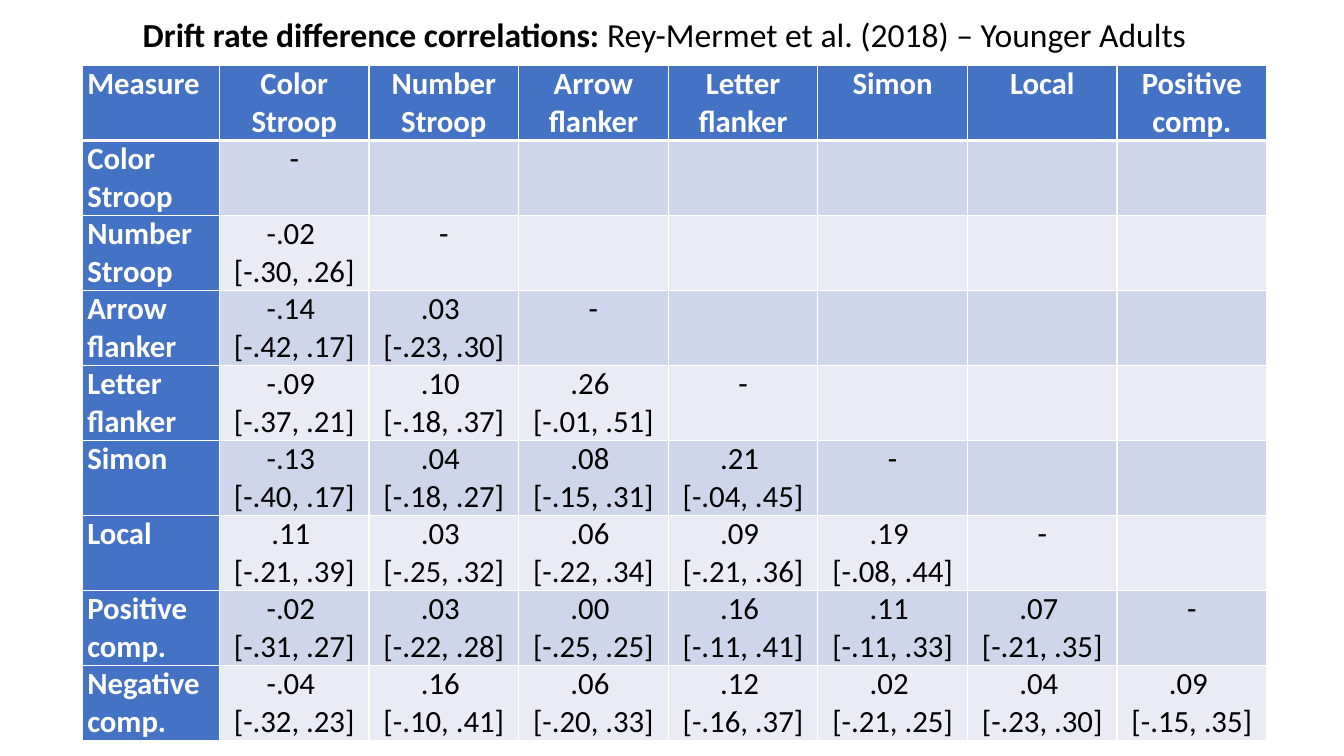
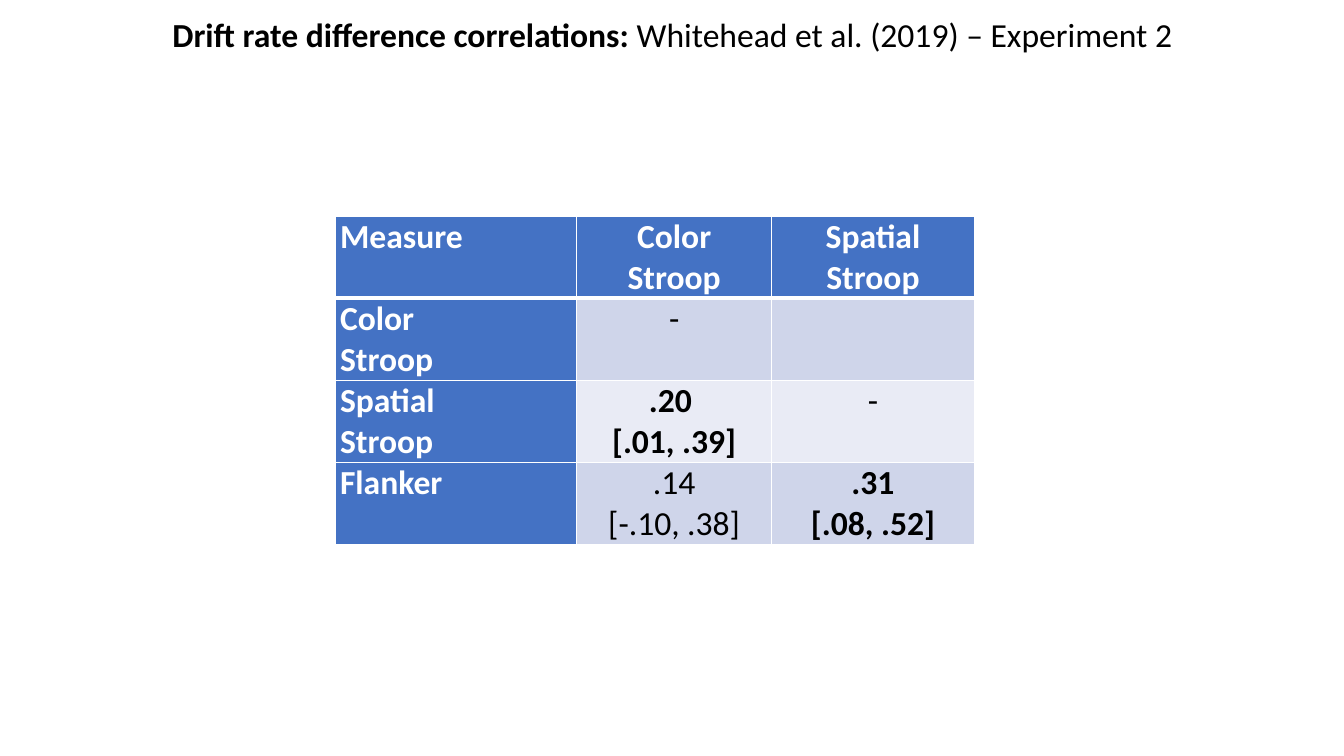
import pptx
import pptx.util
import pptx.dml.color
import pptx.enum.text
import pptx.oxml
import pptx.oxml.ns

Cm = pptx.util.Cm
Pt = pptx.util.Pt
RGBColor = pptx.dml.color.RGBColor
ALIGN = pptx.enum.text.PP_ALIGN

FONT = "Calibri"
BLUE = RGBColor(0x44, 0x72, 0xC4)
BANDS = RGBColor(0xCF, 0xD5, 0xEA), RGBColor(0xE9, 0xEB, 0xF5)
WHITE = RGBColor(0xFF, 0xFF, 0xFF)
BLACK = RGBColor(0, 0, 0)

# Each measure with its correlations and intervals against the ones before it
YOUNG = {
    "Color Stroop": [],
    "Number Stroop": ["-.02 [-.30, .26]"],
    "Arrow flanker": ["-.14 [-.42, .17]", ".03 [-.23, .30]"],
    "Letter flanker": ["-.09 [-.37, .21]", ".10 [-.18, .37]", ".26 [-.01, .51]"],
    "Simon": ["-.13 [-.40, .17]", ".04 [-.18, .27]", ".08 [-.15, .31]",
              ".21 [-.04, .45]"],
    "Local": [".11 [-.21, .39]", ".03 [-.25, .32]", ".06 [-.22, .34]",
              ".09 [-.21, .36]", ".19 [-.08, .44]"],
    "Positive comp.": ["-.02 [-.31, .27]", ".03 [-.22, .28]", ".00 [-.25, .25]",
                       ".16 [-.11, .41]", ".11 [-.11, .33]", ".07 [-.21, .35]"],
    "Negative comp.": ["-.04 [-.32, .23]", ".16 [-.10, .41]", ".06 [-.20, .33]",
                       ".12 [-.16, .37]", ".02 [-.21, .25]", ".04 [-.23, .30]",
                       ".09 [-.15, .35]"],
}
SECOND = {
    "Color Stroop": [],
    "Spatial Stroop": [".20 [.01, .39]"],
    "Flanker": [".14[-.10, .38]", ".31[.08, .52]"],
}


def write(para, text, size=24, bold=False, color=BLACK, align=ALIGN.CENTER):
    """Add one formatted run to a paragraph."""
    para.alignment = align
    run = para.add_run()
    run.text = text
    font = run.font
    font.name, font.size, font.bold = FONT, Pt(size), bold
    font.color.rgb = color


class Deck:
    def __init__(self):
        self.file = pptx.Presentation()
        self.file.slide_width, self.file.slide_height = Cm(33.87), Cm(19.05)
        self.slide = None

    def page(self, source, left=2.9):
        """Start a slide with its centred title."""
        self.slide = self.file.slides.add_slide(self.file.slide_layouts[5])
        title = self.slide.shapes.title
        title.left, title.top = Cm(left), Cm(0.23)
        title.width, title.height = Cm(28.09), Cm(1.28)
        frame = title.text_frame
        frame.auto_size = pptx.enum.text.MSO_AUTO_SIZE.NONE
        para = frame.paragraphs[0]
        write(para, "Drift rate difference correlations: ", bold=True)
        write(para, source)

    def edge(self, cell, row):
        """Draw white borders, thick between header and body."""
        thick = {"T": row == 1, "B": row == 0}
        props = cell._tc.get_or_add_tcPr()
        for spot, side in enumerate("LRTB"):
            width = Pt(3 if thick.get(side) else 1)
            props.insert(spot, pptx.oxml.parse_xml(
                f'<a:ln{side} {pptx.oxml.ns.nsdecls("a")} w="{width}"><a:solidFill>'
                f'<a:srgbClr val="{WHITE}"/></a:solidFill></a:ln{side}>'))

    def cell(self, cell, lines, fill, **style):
        """Fill a cell with one paragraph per line."""
        cell.margin_left = cell.margin_right = Cm(0.12)
        cell.margin_top = cell.margin_bottom = 0
        cell.fill.solid()
        cell.fill.fore_color.rgb = fill
        frame = cell.text_frame
        for spot, line in enumerate(lines):
            para = frame.add_paragraph() if spot else frame.paragraphs[0]
            write(para, line, **style)

    def matrix(self, data, left, top, widths, height, size):
        """Draw a lower triangle of correlations."""
        names = list(data)
        rows = len(names) + 1
        table = self.slide.shapes.add_table(
            rows, len(widths), Cm(left), Cm(top),
            Cm(sum(widths)), Cm(height * rows)).table
        table.first_col = True
        for col, width in zip(table.columns, widths):
            col.width = Cm(width)
        grid = [["Measure"] + names[:-1]]
        grid += [[name, *data[name], "-"] for name in names]
        for y, row in enumerate(table.rows):
            row.height = Cm(height)
            for x, cell in enumerate(row.cells):
                text = grid[y][x] if x < len(grid[y]) else ""
                if x == 0 or y == 0:
                    self.cell(cell, text.split(), BLUE, size=size, bold=True,
                              color=WHITE, align=ALIGN.CENTER if x else ALIGN.LEFT)
                else:
                    # Bold marks an interval that lies above zero
                    value, mark, span = text.partition("[")
                    lines = [part for part in (value, mark + span) if part]
                    self.cell(cell, lines, BANDS[(y - 1) % 2], size=size,
                              bold=span.startswith("."))
                self.edge(cell, y)


def main():
    deck = Deck()

    # Younger adults
    deck.page("Rey-Mermet et al. (2018) – Younger Adults", left=2.7)
    deck.matrix(YOUNG, 2.08, 1.65, [3.45] + [3.77] * 7, 1.89, 22)

    # Experiment 2
    deck.page("Whitehead et al. (2019) – Experiment 2")
    deck.matrix(SECOND, 8.45, 5.45, [6.08, 4.92, 5.1], 2.03, 24)

    deck.file.save("out.pptx")


if __name__ == "__main__":
    main()
